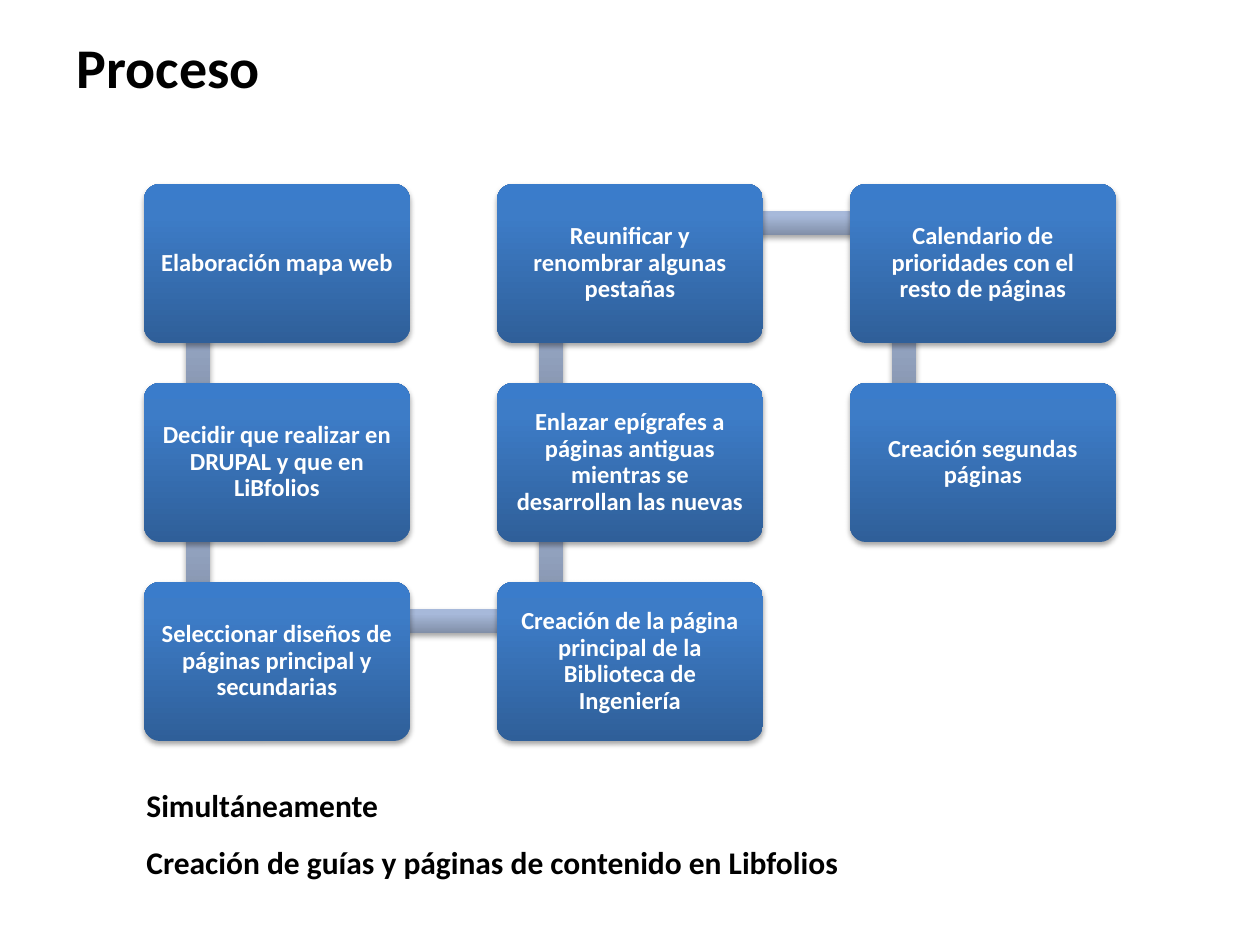
import itertools

import lxml.etree
import pptx
import pptx.dml.color
import pptx.enum.shapes
import pptx.enum.text
import pptx.oxml
import pptx.oxml.ns
import pptx.util

SHAPE = pptx.enum.shapes.MSO_SHAPE
ALIGN = pptx.enum.text.PP_ALIGN
ANCHOR = pptx.enum.text.MSO_ANCHOR
NS = pptx.oxml.ns.nsdecls("a")

STEPS = [
    ("Elaboración mapa web", 0, 0),
    ("Decidir que realizar en DRUPAL y que en LiBfolios", 0, 1),
    ("Seleccionar diseños de páginas principal y secundarias", 0, 2),
    ("Creación de la página principal de la Biblioteca de Ingeniería", 1, 2),
    ("Enlazar epígrafes a páginas antiguas mientras se desarrollan las nuevas", 1, 1),
    ("Reunificar y renombrar algunas pestañas", 1, 0),
    ("Calendario de prioridades con el resto de páginas", 2, 0),
    ("Creación segundas páginas", 2, 1),
]


def px(n):
    return pptx.util.Emu(round(n * 914400 / 126))


def color(value):
    return pptx.dml.color.RGBColor.from_string(value)


def write(tf, text, size=18, fill="000000", align=ALIGN.LEFT, anchor=ANCHOR.TOP,
          inset=None, leading=None, gap=0):
    tf.word_wrap = True
    tf.auto_size = pptx.enum.text.MSO_AUTO_SIZE.NONE
    tf.vertical_anchor = anchor
    if inset is not None:
        tf.margin_left = tf.margin_right = tf.margin_top = tf.margin_bottom = px(inset)
    for i, line in enumerate(text.split("\n")):
        p = tf.add_paragraph() if i else tf.paragraphs[0]
        p.alignment = align
        p.space_before = pptx.util.Pt(gap if i else 0)
        if leading:
            p.line_spacing = leading
        r = p.add_run()
        r.text = line
        r.font.name = "Calibri"
        r.font.size = pptx.util.Pt(size)
        r.font.bold = True
        r.font.color.rgb = color(fill)


class Deck:
    """Holds the style and the current slide."""

    box_fill = ("2F5F99", "3D7CC7", "3A7CCB")
    bar_fill = ("818FA8", "A7B9DA", "A7BADC")
    left, top, pitch_x, pitch_y = 144, 184, 353, 199
    box_w, box_h, bar_h = 266, 159, 24
    joint_x, joint_y = 54, 39

    def __init__(self, prs):
        self.s = prs.slides.add_slide(prs.slide_layouts[5])

    def cell(self, col, row):
        return self.left + col * self.pitch_x, self.top + row * self.pitch_y

    def title(self, text, x, y, w, h):
        sp = self.s.shapes.title
        sp.left, sp.top, sp.width, sp.height = map(px, (x, y, w, h))
        write(sp.text_frame, text, size=32)

    def note(self, text, x, y, w, h):
        sp = self.s.shapes.add_textbox(*map(px, (x, y, w, h)))
        write(sp.text_frame, text, gap=11)

    def panel(self, kind, x, y, w, h, stops):
        sp = self.s.shapes.add_shape(kind, *map(px, (x, y, w, h)))
        spPr = sp._element.spPr
        gs = "".join(f'<a:gs pos="{pos}"><a:srgbClr val="{value}"/></a:gs>'
                     for pos, value in zip((0, 80000, 100000), stops))
        spPr.append(pptx.oxml.parse_xml(
            f'<a:gradFill {NS} rotWithShape="0"><a:gsLst>{gs}</a:gsLst>'
            '<a:lin ang="16200000" scaled="0"/></a:gradFill>'))
        sp.line.fill.background()
        spPr.append(pptx.oxml.parse_xml(
            f'<a:effectLst {NS}><a:outerShdw blurRad="40000" dist="23000" '
            'dir="5400000" rotWithShape="0"><a:srgbClr val="000000">'
            '<a:alpha val="35000"/></a:srgbClr></a:outerShdw></a:effectLst>'))
        return sp

    def box(self, text, col, row):
        sp = self.panel(SHAPE.ROUNDED_RECTANGLE, *self.cell(col, row),
                        self.box_w, self.box_h, self.box_fill)
        sp.adjustments[0] = 0.1
        write(sp.text_frame, text, size=14, fill="FFFFFF", align=ALIGN.CENTER,
              anchor=ANCHOR.MIDDLE, inset=12, leading=0.9)

    def bar(self, start, end):
        (x1, y1), (x2, y2) = self.cell(*start), self.cell(*end)
        length = max(abs(x2 - x1), abs(y2 - y1))
        x = (x1 + x2 - length) / 2 + self.joint_x
        y = (y1 + y2 - self.bar_h) / 2 + self.joint_y
        sp = self.panel(SHAPE.RECTANGLE, x, y, length, self.bar_h, self.bar_fill)
        if y1 != y2:
            sp.rotation = 90 if y2 > y1 else 270


def main():
    prs = pptx.Presentation()
    prs.slide_width, prs.slide_height = px(1260), px(945)
    deck = Deck(prs)
    deck.title("Proceso", 64, 26, 297, 59)
    for (text, *here), after in itertools.zip_longest(STEPS, STEPS[1:]):
        if after:
            deck.bar(here, after[1:])
        deck.box(text, *here)
    deck.note("Simultáneamente\nCreación de guías y páginas de contenido en Libfolios",
              134, 780, 1042, 146)
    prs.save("out.pptx")


if __name__ == "__main__":
    main()
